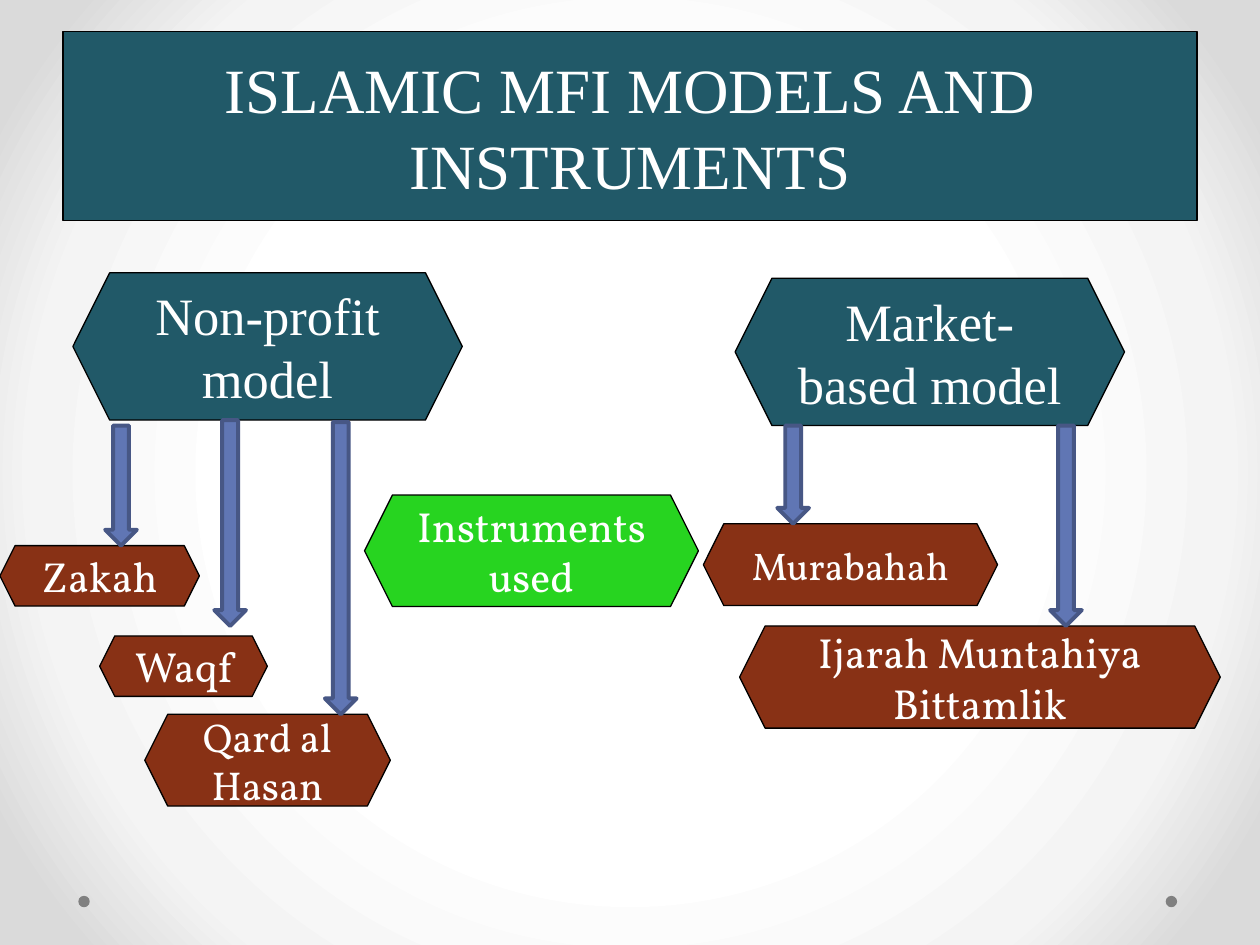
from lxml import etree
from pptx import Presentation
from pptx import util as u
from pptx.dml.color import RGBColor
from pptx.enum import shapes, text
from pptx.oxml import ns

TEAL = RGBColor(0x21, 0x59, 0x68)
GREEN = RGBColor(0x27, 0xD4, 0x20)
BROWN = RGBColor(0x88, 0x31, 0x15)
BLUE = RGBColor(0x60, 0x76, 0xB4)
DARK_BLUE = RGBColor(0x47, 0x57, 0x85)
GREY = RGBColor(0x80, 0x80, 0x80)
BLACK = RGBColor(0, 0, 0)
WHITE = RGBColor(0xFF, 0xFF, 0xFF)

SERIF = "Times New Roman"
BODY = "Vollkorn"
SHAPE = shapes.MSO_SHAPE


class Diagram:
    """Style and current slide; all lengths are in centimetres."""

    arrow_width = 0.64
    dot_size = 0.23

    def __init__(self, slide):
        self.slide = slide

    def background(self, stops):
        fill = self.slide.background.fill
        fill.gradient()
        grad = self.slide.background._cSld.find(".//" + ns.qn("a:gradFill"))
        for child in list(grad):
            grad.remove(child)
        stop_list = etree.SubElement(grad, ns.qn("a:gsLst"))
        for percent, colour in stops:
            stop = etree.SubElement(stop_list, ns.qn("a:gs"), pos=str(percent * 1000))
            etree.SubElement(stop, ns.qn("a:srgbClr"), val=colour)
        circle = etree.SubElement(grad, ns.qn("a:path"), path="circle")
        etree.SubElement(circle, ns.qn("a:fillToRect"),
                         l="50000", t="50000", r="50000", b="50000")

    def shape(self, kind, left, top, width, height, fill, line=None, weight=0.75):
        shape = self.slide.shapes.add_shape(
            kind, u.Cm(left), u.Cm(top), u.Cm(width), u.Cm(height))
        shape.shadow.inherit = False
        shape.fill.solid()
        shape.fill.fore_color.rgb = fill
        if line is None:
            shape.line.fill.background()
        else:
            shape.line.color.rgb = line
            shape.line.width = u.Pt(weight)
        return shape

    def box(self, words, left, top, width, height, fill,
            size=24, font=BODY, kind=SHAPE.HEXAGON):
        box = self.shape(kind, left, top, width, height, fill, BLACK)
        frame = box.text_frame
        frame.word_wrap = True
        frame.vertical_anchor = text.MSO_ANCHOR.MIDDLE
        label = frame.paragraphs[0]
        label.text = words
        label.alignment = text.PP_ALIGN.CENTER
        label.font.name = font
        label.font.size = u.Pt(size)
        label.font.color.rgb = WHITE

    def arrow(self, left, top, bottom):
        self.shape(SHAPE.DOWN_ARROW, left, top, self.arrow_width, bottom - top,
                   BLUE, DARK_BLUE, 2.25)

    def dot(self, left, top):
        self.shape(SHAPE.OVAL, left, top, self.dot_size, self.dot_size, GREY)


def main():
    deck = Presentation()
    deck.slide_width, deck.slide_height = u.Cm(25.4), u.Cm(19.05)
    diagram = Diagram(deck.slides.add_slide(deck.slide_layouts[6]))

    # Backdrop
    diagram.background([(50, "FFFFFF"), (76, "F4F4F4"), (92, "DADADA")])
    for left in (23.5, 1.58):
        diagram.dot(left, 18.06)

    # Title
    diagram.box("ISLAMIC MFI MODELS AND INSTRUMENTS", 1.27, 0.64, 22.86, 3.81,
                TEAL, 36, SERIF, SHAPE.RECTANGLE)

    # Models
    for model, left, top in (("Non-profit model", 1.47, 5.5),
                             ("Market-based model", 14.82, 5.61)):
        diagram.box(model, left, top, 7.85, 2.97, TEAL, 30, SERIF)
    diagram.box("Instruments used", 7.35, 9.98, 6.73, 2.25, GREEN)

    # Instruments: name, left, top, width, height, text size
    instruments = (
        ("Zakah", 0, 11, 4.02, 1.22, 24),
        ("Waqf", 2.01, 12.82, 3.38, 1.22, 24),
        ("Qard al Hasan", 2.92, 14.4, 4.95, 1.85, 23),
        ("Murabahah", 14.18, 10.56, 5.93, 1.65, 22),
        ("Ijarah Muntahiya Bittamlik", 14.91, 12.62, 9.69, 2.06, 24),
    )
    for name, left, top, width, height, size in instruments:
        diagram.box(name, left, top, width, height, BROWN, size)

    # Arrows from models to instruments: left, top, bottom
    for left, top, bottom in ((2.12, 8.58, 11), (4.32, 8.47, 12.62),
                              (6.55, 8.51, 14.4), (15.67, 8.58, 10.56),
                              (21.17, 8.58, 12.62)):
        diagram.arrow(left, top, bottom)

    deck.save("out.pptx")


if __name__ == "__main__":
    main()
